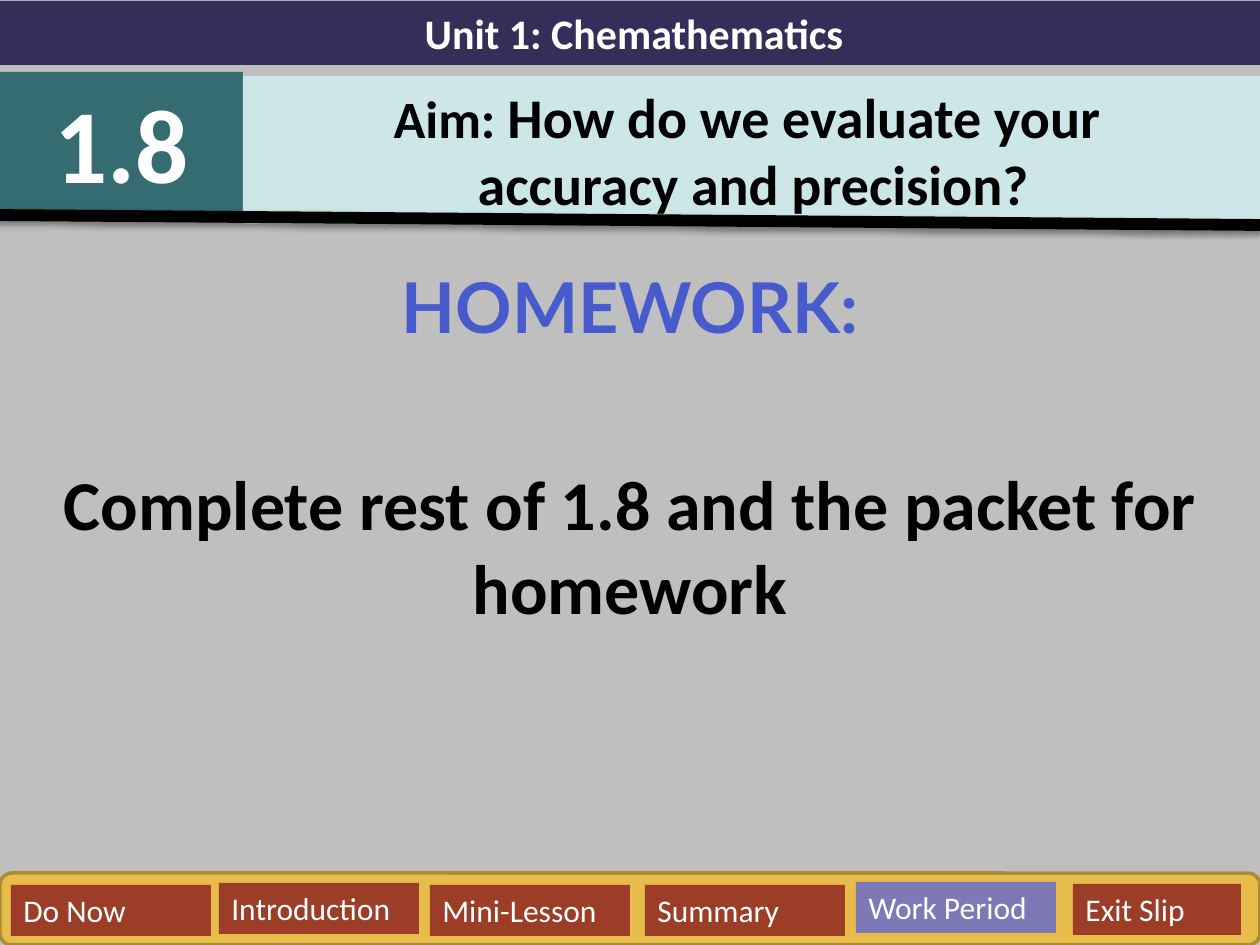
from dataclasses import dataclass

from lxml import etree
from pptx import Presentation
from pptx.dml.color import RGBColor
from pptx.enum.shapes import MSO_CONNECTOR, MSO_SHAPE
from pptx.enum.text import MSO_ANCHOR, PP_ALIGN
from pptx.oxml.ns import qn
from pptx.util import Emu, Pt

RECT = MSO_SHAPE.RECTANGLE
ROUNDED = MSO_SHAPE.ROUNDED_RECTANGLE
STRAIGHT = MSO_CONNECTOR.STRAIGHT
LEFT, CENTER = PP_ALIGN.LEFT, PP_ALIGN.CENTER
TOP = MSO_ANCHOR.TOP

PX_PER_INCH = 126
WHITE, BLACK = "FFFFFF", "000000"
RUST, VIOLET = "9C3D28", "7E78B7"


@dataclass(frozen=True)
class Run:
    text: str
    size: int
    color: str = WHITE
    bold: bool = True
    font: str = "Calibri"


@dataclass(frozen=True)
class Block:
    left: int
    top: int
    width: int
    height: int
    fill: str
    paragraphs: tuple[tuple[Run, ...], ...] = ()
    align: PP_ALIGN = CENTER


@dataclass(frozen=True)
class Tab:
    label: str
    left: int
    top: int
    width: int = 200
    fill: str = RUST


def px(length: int) -> Emu:
    return Emu(round(length * 914400 / PX_PER_INCH))


def rgb(color: str) -> RGBColor:
    return RGBColor.from_string(color)


def write(frame, paragraphs: tuple[tuple[Run, ...], ...], align: PP_ALIGN) -> None:
    frame.word_wrap = True
    frame.vertical_anchor = TOP
    for index, runs in enumerate(paragraphs):
        paragraph = frame.add_paragraph() if index else frame.paragraphs[0]
        paragraph.alignment = align
        for part in runs:
            run = paragraph.add_run()
            run.text = part.text
            run.font.size = Pt(part.size)
            run.font.name = part.font
            run.font.bold = part.bold
            run.font.color.rgb = rgb(part.color)


def draw_block(slide, block: Block, kind: MSO_SHAPE = RECT):
    shape = slide.shapes.add_shape(
        kind, px(block.left), px(block.top), px(block.width), px(block.height))
    shape.shadow.inherit = False
    shape.fill.solid()
    shape.fill.fore_color.rgb = rgb(block.fill)
    shape.line.fill.background()
    write(shape.text_frame, block.paragraphs, block.align)
    return shape


def draw_tab(slide, tab: Tab) -> None:
    label = Run(tab.label, 18, bold=False)
    draw_block(slide, Block(tab.left, tab.top, tab.width, 51, tab.fill, ((label,),), LEFT))


def draw_divider(slide) -> None:
    divider = slide.shapes.add_connector(STRAIGHT, px(-6), px(215), px(1260), px(225))
    divider.line.color.rgb = rgb(BLACK)
    divider.line.width = Pt(6.75)
    effects = etree.SubElement(divider.element.spPr, qn("a:effectLst"))
    shadow = etree.SubElement(
        effects, qn("a:outerShdw"), blurRad=str(Pt(3.1)), dist=str(Pt(1.6)),
        dir="5400000", rotWithShape="0")
    color = etree.SubElement(shadow, qn("a:srgbClr"), val=BLACK)
    etree.SubElement(color, qn("a:alpha"), val="38000")


HEADERS = (
    Block(0, 1, 1268, 64, "342F59", ((Run("Unit 1: Chemathematics", 24),),)),
    Block(0, 72, 243, 140, "346C71", ((Run("1.8", 60),),)),
    Block(243, 76, 1021, 148, "CDE6E8", (
        (Run("Aim: ", 30, BLACK), Run("How do we evaluate your ", 32, BLACK)),
        (Run("accuracy and precision?", 32, BLACK),),
    )),
)
HOMEWORK = (
    (Run("HOMEWORK:", 40, "475BCD", font="Lato"),),
    (Run("Complete rest of 1.8 and the packet for homework", 40, BLACK),),
)
TABS = (
    Tab("Do Now", 11, 885),
    Tab("Introduction", 219, 883),
    Tab("Mini-Lesson", 430, 885),
    Tab("Summary", 645, 885),
    Tab("Work Period", 856, 882, fill=VIOLET),
    Tab("Exit Slip", 1073, 884, width=168),
)


def main() -> None:
    deck = Presentation()
    deck.slide_width, deck.slide_height = px(1260), px(945)
    slide = deck.slides.add_slide(deck.slide_layouts[6])
    slide.background.fill.solid()
    slide.background.fill.fore_color.rgb = rgb("BFBFBF")

    # Homework assignment
    body = slide.shapes.add_textbox(px(0), px(257), px(1260), px(688)).text_frame
    write(body, HOMEWORK, CENTER)
    body.paragraphs[1].space_before = Pt(65)

    # Unit, lesson number and aim
    for header in HEADERS:
        draw_block(slide, header)
    draw_divider(slide)

    # Lesson stages
    bar = draw_block(slide, Block(0, 873, 1260, 72, "E8BC4A"), ROUNDED)
    bar.line.color.rgb = rgb("AC8B37")
    bar.line.width = Pt(2)
    for tab in TABS:
        draw_tab(slide, tab)

    deck.save("out.pptx")


if __name__ == "__main__":
    main()
